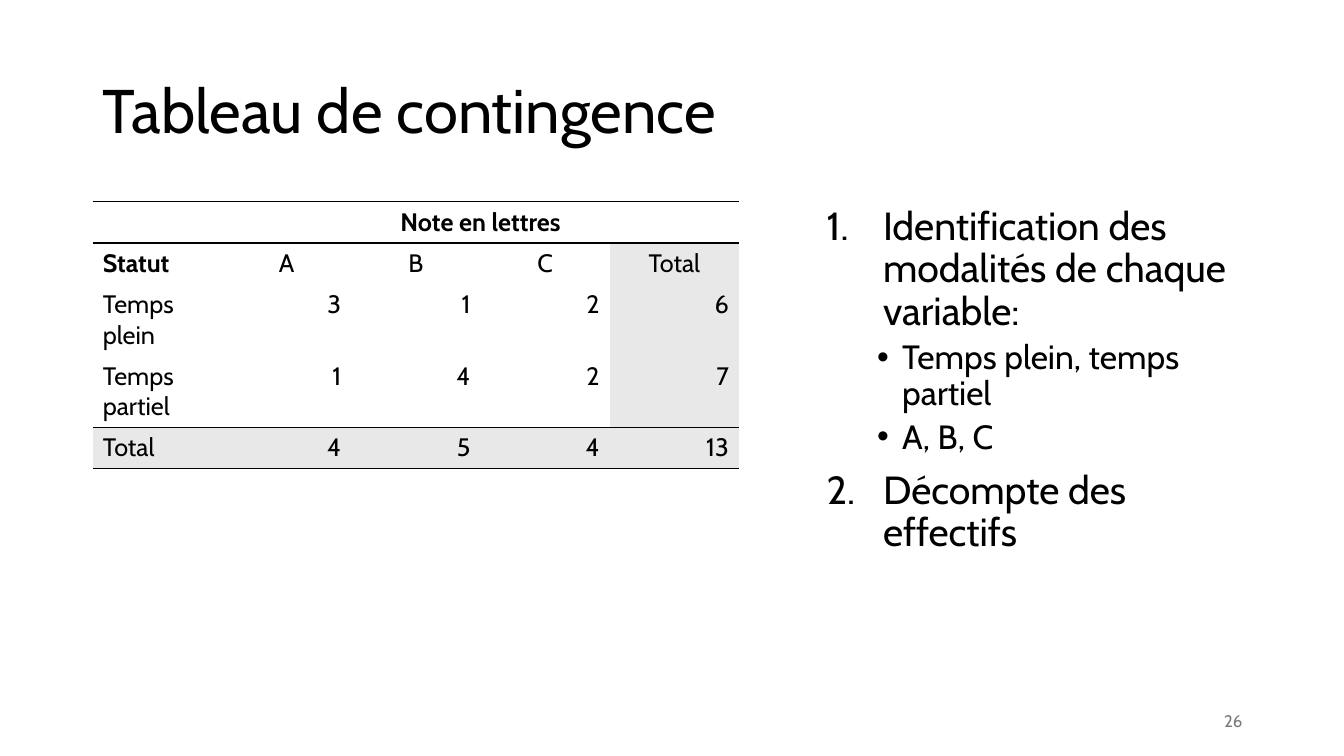
import pptx
import pptx.dml.color
import pptx.enum.text
import pptx.oxml.ns
import pptx.util
from lxml import etree

Inches = pptx.util.Inches
Pt = pptx.util.Pt
RGBColor = pptx.dml.color.RGBColor
ALIGN = pptx.enum.text.PP_ALIGN
ANCHOR = pptx.enum.text.MSO_ANCHOR
qn = pptx.oxml.ns.qn

BLACK = RGBColor(0, 0, 0)
GRAY = RGBColor(0x79, 0x79, 0x79)
TOTAL_FILL = RGBColor(0xE8, 0xE8, 0xE8)
FONT = "Cabin"


def add_run(p, text, size, color=BLACK, bold=False):
    r = p.add_run()
    r.text = text
    r.font.name = FONT
    r.font.size = Pt(size)
    r.font.bold = bold
    r.font.color.rgb = color


def add_box(s, left, top, width, height, anchor):
    sp = s.shapes.add_textbox(Inches(left), Inches(top), Inches(width), Inches(height))
    tf = sp.text_frame
    tf.word_wrap = True
    tf.vertical_anchor = anchor
    return tf


prs = pptx.Presentation()
prs.slide_width = Inches(13.33)
prs.slide_height = Inches(7.5)
s = prs.slides.add_slide(prs.slide_layouts[6])

tf = add_box(s, 0.92, 0.4, 11.5, 1.45, ANCHOR.MIDDLE)
p = tf.paragraphs[0]
p.line_spacing = 0.9
add_run(p, "Tableau de contingence", 44)

steps = [
    (0, "Identification des modalités de chaque variable:"),
    (1, "Temps plein, temps partiel"),
    (1, "A, B, C"),
    (0, "Décompte des effectifs"),
]
levels = [
    (28, 10, 0.56, -0.56, "buAutoNum", {"type": "arabicPeriod"}),
    (24, 5, 0.75, -0.25, "buChar", {"char": "•"}),
]
tf = add_box(s, 8.1, 2, 4.32, 4.53, ANCHOR.TOP)
for i, (level, text) in enumerate(steps):
    size, before, margin, indent, bullet, attrs = levels[level]
    p = tf.add_paragraph() if i else tf.paragraphs[0]
    p.level = level
    p.line_spacing = 0.9
    p.space_before = Pt(before)
    pPr = p._p.get_or_add_pPr()
    pPr.set("marL", str(Inches(margin)))
    pPr.set("indent", str(Inches(indent)))
    etree.SubElement(pPr, qn("a:buFont"), typeface="Arial" if level else "+mj-lt")
    etree.SubElement(pPr, qn("a:" + bullet), attrs)
    add_run(p, text, size)

tf = add_box(s, 9.42, 6.95, 3, 0.4, ANCHOR.MIDDLE)
p = tf.paragraphs[0]
p.alignment = ALIGN.RIGHT
add_run(p, "26", 12, GRAY)

rows = [
    ["", "Note en lettres", "", "", ""],
    ["Statut", "A", "B", "C", "Total"],
    ["Temps plein", "3", "1", "2", "6"],
    ["Temps partiel", "1", "4", "2", "7"],
    ["Total", "4", "5", "4", "13"],
]
heights = [0.41, 0.41, 0.71, 0.71, 0.41]
table = s.shapes.add_table(
    5, 5, Inches(0.92), Inches(2), Inches(6.41), Inches(sum(heights))
).table
table.first_row = False
table.horz_banding = False
for col in table.columns:
    col.width = Inches(6.41 / 5)
table.cell(0, 1).merge(table.cell(0, 4))

for i, values in enumerate(rows):
    table.rows[i].height = Inches(heights[i])
    ruled = {"lnT": i in (0, 1, 4), "lnB": i in (0, 3, 4)}
    for j, text in enumerate(values):
        cell = table.cell(i, j)
        tcPr = cell._tc.get_or_add_tcPr()
        for side in ("lnL", "lnR", "lnT", "lnB"):
            ln = etree.SubElement(tcPr, qn("a:" + side), w=str(Pt(1)))
            if ruled.get(side):
                line_fill = etree.SubElement(ln, qn("a:solidFill"))
                etree.SubElement(line_fill, qn("a:srgbClr"), val=str(BLACK))
            else:
                etree.SubElement(ln, qn("a:noFill"))
        if i == 4 or (i > 0 and j == 4):
            cell.fill.solid()
            cell.fill.fore_color.rgb = TOTAL_FILL
        else:
            cell.fill.background()
        p = cell.text_frame.paragraphs[0]
        if j:
            p.alignment = ALIGN.CENTER if i < 2 else ALIGN.RIGHT
        if text:
            add_run(p, text, 18, bold=text in ("Note en lettres", "Statut"))

prs.save("out.pptx")
